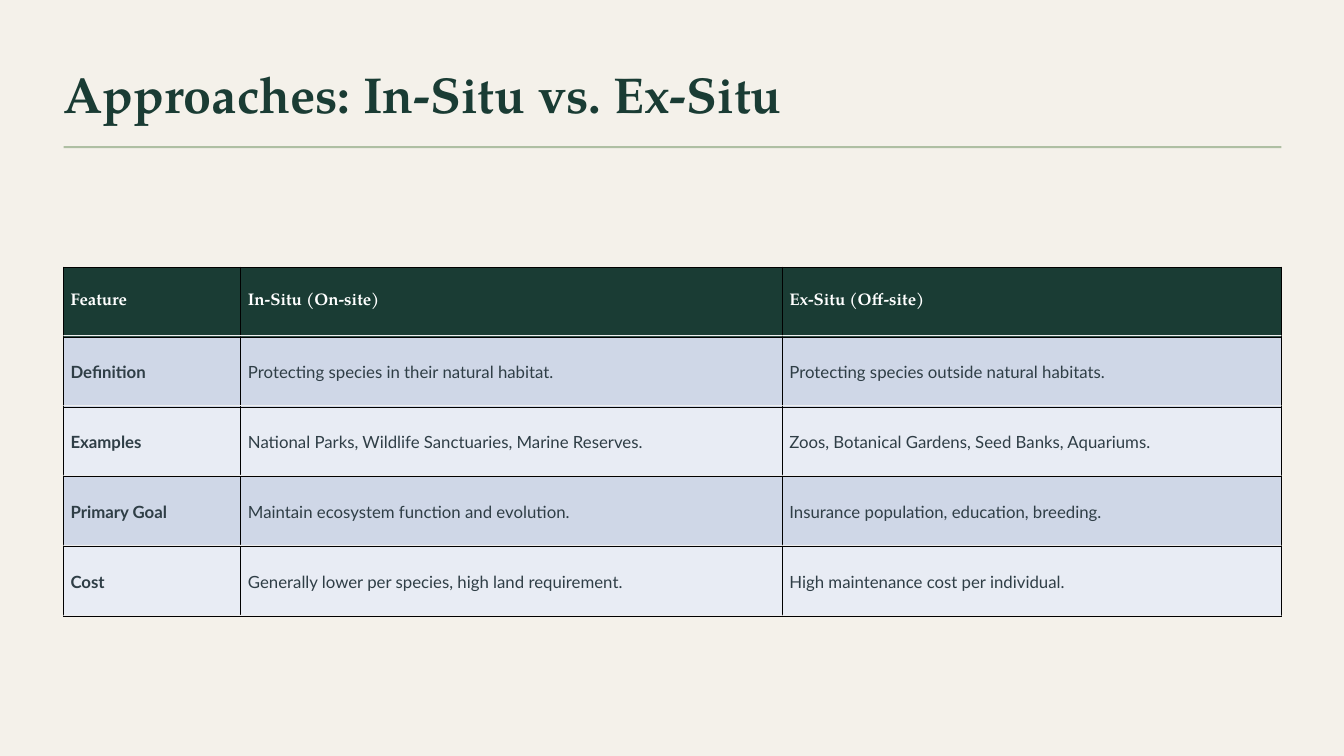
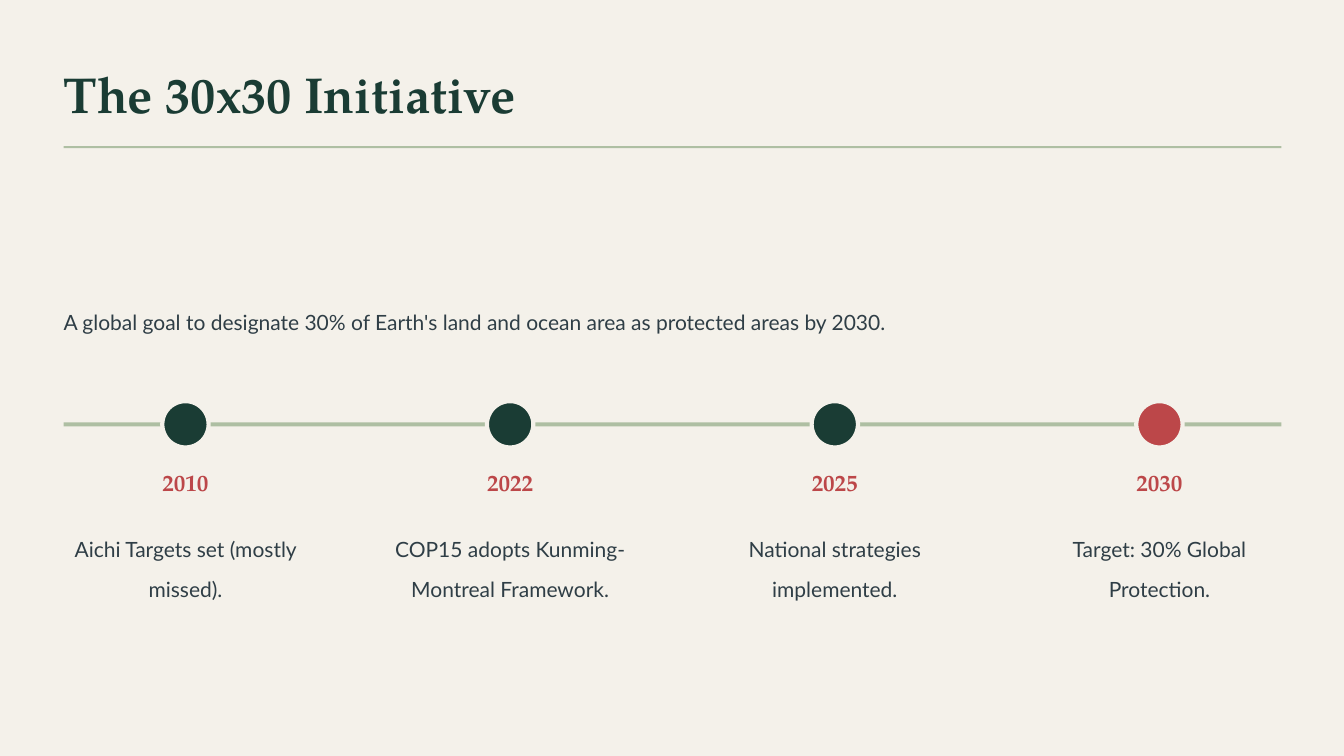
from lxml import etree
from pptx import Presentation
from pptx.dml.color import RGBColor
from pptx.enum.shapes import MSO_SHAPE
from pptx.enum.text import MSO_ANCHOR, MSO_AUTO_SIZE, PP_ALIGN
from pptx.oxml.ns import qn
from pptx.util import Inches, Pt

RECTANGLE = MSO_SHAPE.RECTANGLE
ROUNDED = MSO_SHAPE.ROUNDED_RECTANGLE
MIDDLE = MSO_ANCHOR.MIDDLE
FIT_TEXT = MSO_AUTO_SIZE.SHAPE_TO_FIT_TEXT
LEFT = PP_ALIGN.LEFT
CENTER = PP_ALIGN.CENTER

CREAM = RGBColor(0xF4, 0xF1, 0xEA)
FOREST = RGBColor(0x1A, 0x3C, 0x34)
SAGE = RGBColor(0xAE, 0xBF, 0xA3)
SLATE = RGBColor(0x2F, 0x3E, 0x46)
RED = RGBColor(0xBC, 0x47, 0x49)
WHITE = RGBColor(0xFF, 0xFF, 0xFF)
BLACK = RGBColor(0x00, 0x00, 0x00)
RULE_GRAY = RGBColor(0xEE, 0xEE, 0xEE)
BANDS = (RGBColor(0xCF, 0xD7, 0xE7), RGBColor(0xE8, 0xEC, 0xF4))

SERIF = "TeX Gyre Pagella"
SANS = "Lato"

MARGIN = 0.63
CONTENT_WIDTH = 12.08

TABLE_TITLE = "Approaches: In-Situ vs. Ex-Situ"
TABLE_ROWS = [
    ("Feature", "In-Situ (On-site)", "Ex-Situ (Off-site)"),
    ("Definition", "Protecting species in their natural habitat.",
     "Protecting species outside natural habitats."),
    ("Examples", "National Parks, Wildlife Sanctuaries, Marine Reserves.",
     "Zoos, Botanical Gardens, Seed Banks, Aquariums."),
    ("Primary Goal", "Maintain ecosystem function and evolution.",
     "Insurance population, education, breeding."),
    ("Cost", "Generally lower per species, high land requirement.",
     "High maintenance cost per individual."),
]
COLUMN_WIDTHS = (1.76, 5.37, 4.95)
TABLE_TOP = 2.65
TABLE_HEIGHT = 3.47

TIMELINE_TITLE = "The 30x30 Initiative"
TIMELINE_INTRO = ("A global goal to designate 30% of Earth's land and ocean area "
                  "as protected areas by 2030.")
MILESTONES = [
    ("2010", "Aichi Targets set (mostly missed).", FOREST),
    ("2022", "COP15 adopts Kunming-Montreal Framework.", FOREST),
    ("2025", "National strategies implemented.", FOREST),
    ("2030", "Target: 30% Global Protection.", RED),
]
MILESTONE_WIDTH = 2.42
YEAR_WIDTH = 2.54
DOT_SIZE = 0.46
AXIS_CENTER = 4.21
AXIS_HEIGHT = 0.04


def format_paragraph(paragraph, size, font_name, color, bold=False, align=LEFT, spacing=None):
    paragraph.alignment = align
    if spacing:
        paragraph.line_spacing = spacing
    for run in paragraph.runs:
        run.font.size = Pt(size)
        run.font.name = font_name
        run.font.color.rgb = color
        run.font.bold = bold


def add_text(slide, text, left, top, width, height, *style, **options):
    box = slide.shapes.add_textbox(Inches(left), Inches(top), Inches(width), Inches(height))
    frame = box.text_frame
    frame.margin_left = frame.margin_top = frame.margin_right = frame.margin_bottom = 0
    frame.word_wrap = True
    frame.auto_size = FIT_TEXT
    frame.text = text
    format_paragraph(frame.paragraphs[0], *style, **options)


def add_block(slide, kind, left, top, width, height, color):
    shape = slide.shapes.add_shape(
        kind, Inches(left), Inches(top), Inches(width), Inches(height))
    shape.shadow.inherit = False
    shape.fill.solid()
    shape.fill.fore_color.rgb = color
    shape.line.fill.background()
    return shape


def add_titled_slide(presentation, title):
    slide = presentation.slides.add_slide(presentation.slide_layouts[6])
    slide.background.fill.solid()
    slide.background.fill.fore_color.rgb = CREAM
    add_text(slide, title, MARGIN, 0.63, 12.69, 0.6, 36, SERIF, FOREST, bold=True)
    add_block(slide, RECTANGLE, MARGIN, 1.45, CONTENT_WIDTH, 0.02, SAGE)
    return slide


def set_borders(cell, color, width):
    properties = cell._tc.get_or_add_tcPr()
    for position, side in enumerate(("a:lnL", "a:lnR", "a:lnT", "a:lnB")):
        line = etree.Element(qn(side), w=str(Pt(width)))
        fill = etree.SubElement(line, qn("a:solidFill"))
        etree.SubElement(fill, qn("a:srgbClr"), val=str(color))
        properties.insert(position, line)


def fill_cell(cell, text, row_index, column_index):
    is_header = row_index == 0
    cell.text_frame.text = text
    cell.vertical_anchor = MIDDLE
    cell.margin_left = cell.margin_right = Inches(0.07)
    cell.margin_top = cell.margin_bottom = Inches(0.05)
    cell.fill.solid()
    cell.fill.fore_color.rgb = FOREST if is_header else BANDS[(row_index - 1) % 2]
    set_borders(cell, BLACK, 0.75)
    format_paragraph(
        cell.text_frame.paragraphs[0], 12,
        SERIF if is_header else SANS,
        WHITE if is_header else SLATE,
        bold=is_header or column_index == 0)


def build_comparison(presentation):
    slide = add_titled_slide(presentation, TABLE_TITLE)
    row_height = TABLE_HEIGHT / len(TABLE_ROWS)
    table = slide.shapes.add_table(
        len(TABLE_ROWS), len(COLUMN_WIDTHS), Inches(MARGIN), Inches(TABLE_TOP),
        Inches(CONTENT_WIDTH), Inches(TABLE_HEIGHT)).table
    for column, width in zip(table.columns, COLUMN_WIDTHS):
        column.width = Inches(width)
    for row_index, texts in enumerate(TABLE_ROWS):
        table.rows[row_index].height = Inches(row_height)
        rule_top = TABLE_TOP + (row_index + 1) * row_height - 0.02
        for column_index, text in enumerate(texts):
            fill_cell(table.cell(row_index, column_index), text, row_index, column_index)
            rule_left = MARGIN + sum(COLUMN_WIDTHS[:column_index])
            add_block(slide, RECTANGLE, rule_left, rule_top,
                      COLUMN_WIDTHS[column_index], 0.01, RULE_GRAY)


def build_timeline(presentation):
    slide = add_titled_slide(presentation, TIMELINE_TITLE)
    add_text(slide, TIMELINE_INTRO, MARGIN, 2.92, CONTENT_WIDTH, 0.4,
             15, SANS, SLATE, spacing=1.6)
    add_block(slide, RECTANGLE, MARGIN, AXIS_CENTER - AXIS_HEIGHT / 2,
              CONTENT_WIDTH, AXIS_HEIGHT, SAGE)
    pitch = (CONTENT_WIDTH - MILESTONE_WIDTH) / (len(MILESTONES) - 1)
    for index, (year, description, color) in enumerate(MILESTONES):
        left = MARGIN + index * pitch
        center = left + MILESTONE_WIDTH / 2
        dot = add_block(slide, ROUNDED, center - DOT_SIZE / 2, AXIS_CENTER - DOT_SIZE / 2,
                        DOT_SIZE, DOT_SIZE, color)
        dot.adjustments[0] = 0.5
        dot.line.color.rgb = CREAM
        dot.line.width = Pt(3)
        add_text(slide, year, center - YEAR_WIDTH / 2, 4.65, YEAR_WIDTH, 0.28,
                 16.5, SERIF, RED, bold=True, align=CENTER)
        add_text(slide, description, left, 5.17, MILESTONE_WIDTH, 0.8,
                 15, SANS, SLATE, align=CENTER, spacing=1.6)


def main():
    presentation = Presentation()
    presentation.slide_width = Inches(13.33)
    presentation.slide_height = Inches(7.5)
    build_comparison(presentation)
    build_timeline(presentation)
    presentation.save("out.pptx")


if __name__ == "__main__":
    main()
